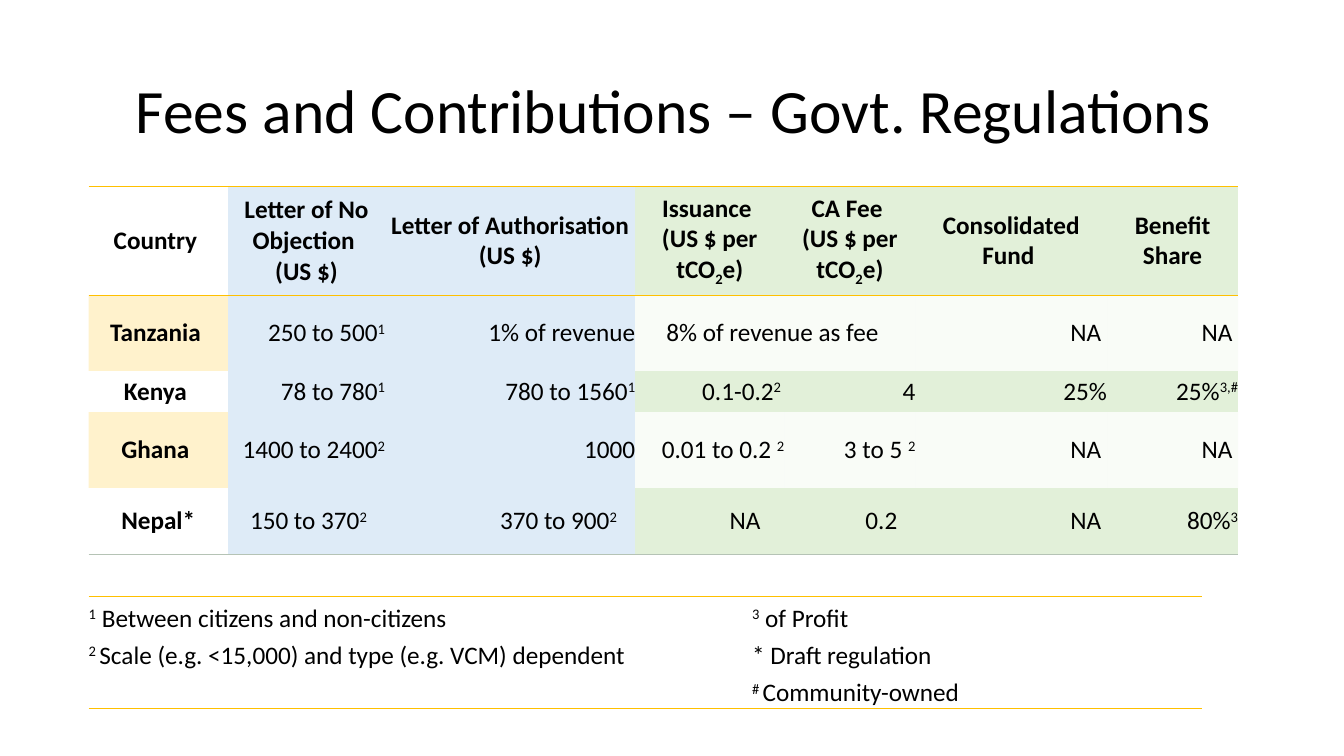
from lxml import etree
from pptx import Presentation
from pptx.dml.color import RGBColor
from pptx.enum.text import MSO_ANCHOR, PP_ALIGN
from pptx.oxml.ns import qn
from pptx.util import Inches, Pt

COLORS = {
    "text": "000000",
    "gold": "FFC000",
    "blue": "DEEBF7",
    "green": "E2F0D9",
    "closing": "B5C3B5",
}
NO_STYLE = "{2D5ABB26-0587-4C30-8999-92F81FD0307C}"
BASELINES = {"^": "30000", "~": "-25000"}


def write_text(frame, text, size=18, bold=False, align=PP_ALIGN.LEFT, line_spacing=None):
    """Write one paragraph per line; ^...^ is superscript and ~...~ subscript."""
    for number, line in enumerate(text.split("\n")):
        paragraph = frame.add_paragraph() if number else frame.paragraphs[0]
        paragraph.alignment = align
        paragraph.line_spacing = line_spacing
        paragraph.font.size = Pt(size)
        mark = "~" if "~" in line else "^"
        for index, piece in enumerate(line.split(mark)):
            if not piece:
                continue
            run = paragraph.add_run()
            run.text = piece
            run.font.name = "Calibri"
            run.font.size = Pt(size)
            run.font.bold = bold
            run.font.color.rgb = RGBColor.from_string(COLORS["text"])
            if index % 2:
                run._r.get_or_add_rPr().set("baseline", BASELINES[mark])


def format_cell(cell, fill=None, opacity=100, top=None, bottom=None, anchor=MSO_ANCHOR.MIDDLE):
    cell.margin_left = cell.margin_right = cell.margin_top = cell.margin_bottom = 0
    cell.vertical_anchor = anchor
    properties = cell._tc.get_or_add_tcPr()
    if fill:
        cell.fill.solid()
        cell.fill.fore_color.rgb = RGBColor.from_string(COLORS[fill])
        if opacity < 100:
            color = properties.find(qn("a:solidFill")).find(qn("a:srgbClr"))
            etree.SubElement(color, qn("a:alpha"), val=str(opacity * 1000))
    else:
        cell.fill.background()
    # Borders precede the fill, with the top one first
    for tag, name in (("a:lnB", bottom), ("a:lnT", top)):
        if name:
            border = etree.Element(qn(tag), w=str(Pt(1)))
            solid = etree.SubElement(border, qn("a:solidFill"))
            etree.SubElement(solid, qn("a:srgbClr"), val=COLORS[name])
            properties.insert(0, border)


presentation = Presentation()
presentation.slide_width = Inches(13.33)
presentation.slide_height = Inches(7.5)
slide = presentation.slides.add_slide(presentation.slide_layouts[6])

# Title
title = slide.shapes.add_textbox(Inches(1.25), Inches(0.4), Inches(11.03), Inches(1.45))
title.text_frame.word_wrap = True
title.text_frame.vertical_anchor = MSO_ANCHOR.MIDDLE
write_text(title.text_frame, "Fees and Contributions – Govt. Regulations", size=44, line_spacing=0.9)

# Both tables, without style or banding
fee_widths = [1.38, 1.56, 2.48, 1.48, 1.3, 1.9, 1.3]
fee_heights = [1.08, 0.75, 0.41, 0.75, 0.66]
note_widths = [1.08, 1.63, 1.82, 2.05, 1.98, 2.48]
note_heights = [0.37] * 3
tables = []
for top, widths, heights in ((1.85, fee_widths, fee_heights), (5.92, note_widths, note_heights)):
    frame = slide.shapes.add_table(
        len(heights), len(widths), Inches(0.88), Inches(top), Inches(sum(widths)), Inches(sum(heights))
    )
    table = frame.table
    table.first_row = table.horz_banding = False
    table._tbl.tblPr.find(qn("a:tableStyleId")).text = NO_STYLE
    for column, width in zip(table.columns, widths):
        column.width = Inches(width)
    for row, height in zip(table.rows, heights):
        row.height = Inches(height)
    tables.append(table)
fees, notes = tables

# Fees by country
fee_rows = [
    ["Country ", "Letter of No Objection \n(US $)", "Letter of Authorisation (US $)",
     "Issuance \n(US $ per tCO~2~e)", "CA Fee \n(US $ per tCO~2~e)", "Consolidated Fund ", "Benefit Share"],
    ["Tanzania ", "250 to 500^1^", "1% of revenue", "8% of revenue as fee ", "", "NA ", "NA "],
    ["Kenya ", "78 to 780^1^", "780 to 1560^1^", "0.1-0.2^2 ^", "4", "25%", "25%^3,#^"],
    ["Ghana ", "1400 to 2400^2^", "1000", "0.01 to 0.2 ^2^", "3 to 5 ^2^", "NA ", "NA "],
    ["Nepal*", "150 to 370^2^", "370 to 900^2^", "NA ", "0.2", "NA ", "80%^3^"],
]
column_fills = ["gold"] + ["blue"] * 2 + ["green"] * 4
last_row = len(fee_rows) - 1
fees.cell(1, 3).merge(fees.cell(1, 4))
for row, texts in enumerate(fee_rows):
    pale = row % 2 == 1
    for column, text in enumerate(texts):
        cell = fees.cell(row, column)
        fill = column_fills[column]
        format_cell(
            cell,
            fill=None if fill == "gold" and not pale else fill,
            opacity=20 if pale and fill != "blue" else 100,
            top="gold" if row == 0 else None,
            bottom={0: "gold", last_row: "closing"}.get(row),
        )
        if row == last_row and 1 <= column <= 4:
            cell.margin_right = Inches(0.18)
        heading = row == 0 or column == 0
        centered = heading or cell.is_merge_origin
        write_text(cell.text_frame, text, bold=heading,
                   align=PP_ALIGN.CENTER if centered else PP_ALIGN.RIGHT)

# Footnotes
note_texts = {
    (0, 0): "^1^ Between citizens and non-citizens",
    (0, 4): "^3^ of Profit",
    (1, 0): "^2 ^Scale (e.g. <15,000) and type (e.g. VCM) dependent",
    (1, 4): "* Draft regulation",
    (2, 4): "^# ^Community-owned",
}
for row, first, last in ((0, 0, 2), (1, 0, 3), (1, 4, 5), (2, 4, 5)):
    notes.cell(row, first).merge(notes.cell(row, last))
for row in range(len(note_heights)):
    for column in range(len(note_widths)):
        cell = notes.cell(row, column)
        format_cell(cell, top="gold" if row == 0 else None,
                    bottom="gold" if row == 2 else None, anchor=MSO_ANCHOR.BOTTOM)
        write_text(cell.text_frame, note_texts.get((row, column), ""))

presentation.save("out.pptx")
